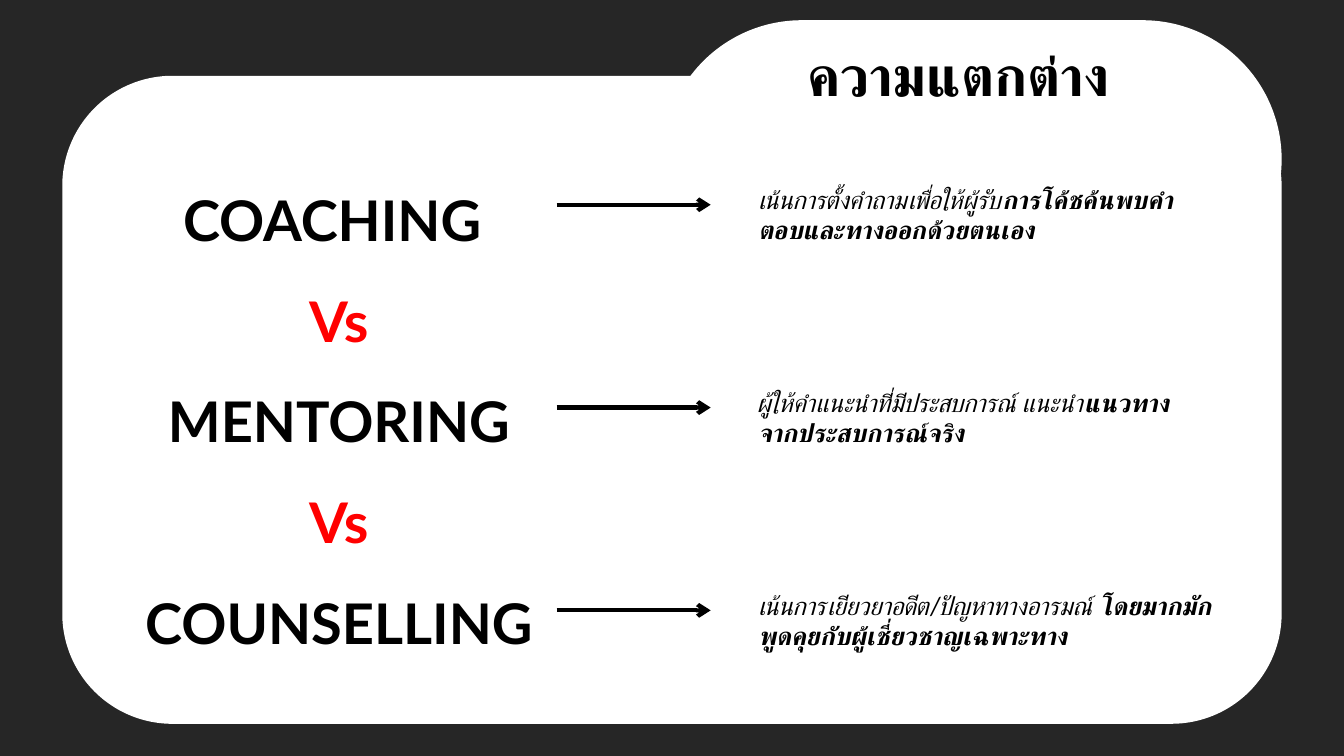
import pptx
import pptx.dml.color
import pptx.enum.lang
import pptx.enum.shapes
import pptx.enum.text
import pptx.oxml
import pptx.oxml.ns
import pptx.util
from pptx.util import Cm

FONT = "Lato"
BLACK, WHITE, RED, CHARCOAL = "000000", "FFFFFF", "FF0000", "262626"
ALIGN = pptx.enum.text.PP_ALIGN
ANCHOR = pptx.enum.text.MSO_ANCHOR
LANGUAGE = pptx.enum.lang.MSO_LANGUAGE_ID

APPROACHES = ["COACHING ", "MENTORING", "COUNSELLING"]
EXPLANATIONS = [
    ("เน้นการตั้งคำถามเพื่อให้ผู้รับ", "การโค้ชค้นพบคำตอบและทางออกด้วยตนเอง", 11.48, 2.57),
    ("ผู้ให้คำแนะนำที่มีประสบการณ์ แนะนำ", "แนวทางจากประสบการณ์จริง", 11.48, 1.8),
    ("เน้นการเยียวยาอดีต/ปัญหาทางอารมณ์ ", "โดยมากมักพูดคุยกับผู้เชี่ยวชาญเฉพาะทาง", 12.27, 1.8),
]


def color(hex_string):
    """Turn a hex string into a colour."""
    return pptx.dml.color.RGBColor.from_string(hex_string)


def element(tag, **attributes):
    """Make a DrawingML element with the given attributes."""
    made = pptx.oxml.parse_xml(f"<a:{tag} {pptx.oxml.ns.nsdecls('a')}/>")
    for key, value in attributes.items():
        made.set(key, value)
    return made


def write(paragraph, text, size=18, bold=None, italic=None, ink=BLACK,
          language=LANGUAGE.THAI):
    """Add a formatted run to a paragraph."""
    run = paragraph.add_run()
    run.text = text
    run.font.name = FONT
    run.font.size = pptx.util.Pt(size)
    run.font.bold = bold
    run.font.italic = italic
    run.font.color.rgb = color(ink)
    run.font.language_id = language
    for script in ("ea", "cs"):
        run.font._element.append(element(script, typeface=FONT))


def place(placeholder, left, top, width, height, wrap=True):
    """Move a placeholder to the front and into its box."""
    tree = placeholder._element.getparent()
    tree.append(placeholder._element)
    placeholder.left, placeholder.top = Cm(left), Cm(top)
    placeholder.width, placeholder.height = Cm(width), Cm(height)
    frame = placeholder.text_frame
    frame.word_wrap = wrap
    frame.auto_size = pptx.enum.text.MSO_AUTO_SIZE.NONE
    frame.vertical_anchor = ANCHOR.TOP
    return frame


def add_panel(slide, left, top, width, height, rounding):
    """Draw a white rounded panel."""
    panel = slide.shapes.add_shape(
        pptx.enum.shapes.MSO_SHAPE.ROUNDED_RECTANGLE,
        Cm(left), Cm(top), Cm(width), Cm(height))
    panel.adjustments[0] = rounding
    panel.shadow.inherit = False
    panel.fill.solid()
    panel.fill.fore_color.rgb = color(WHITE)
    panel.line.fill.background()


def add_folder(slide, left, top, width, height):
    """Draw the folder background: a tab at the top right and a body."""
    tab_width, tab_rise = 15.6, 1.4
    add_panel(slide, left + width - tab_width, top, tab_width, 7.01, 0.5)
    add_panel(slide, left, top + tab_rise, width, height - tab_rise, 0.17)


def add_heading(slide, left, top, width, height):
    """Place the slide title on the tab."""
    frame = place(slide.shapes.title, left, top, width, height, wrap=False)
    heading = frame.paragraphs[0]
    heading.alignment = ALIGN.LEFT
    write(heading, "ความแตกต่าง", size=40, bold=True)


def add_approaches(slide, left, top, width, height):
    """List the three approaches with a red Vs between them."""
    frame = place(slide.placeholders[1], left, top, width, height)
    lines = [(APPROACHES[0], BLACK)]
    for approach in APPROACHES[1:]:
        lines += [("Vs", RED), (approach, BLACK)]
    for index, (words, ink) in enumerate(lines):
        line = frame.paragraphs[0] if index == 0 else frame.add_paragraph()
        properties = line._p.get_or_add_pPr()
        properties.set("marL", "0")
        properties.set("indent", "0")
        properties.append(element("buNone"))
        line.alignment = ALIGN.CENTER
        line.line_spacing = 1.5
        line.space_before = pptx.util.Pt(0)
        write(line, words, size=40, bold=True, ink=ink,
              language=LANGUAGE.ENGLISH_US)


def add_arrow(slide, left, top, length):
    """Draw a horizontal arrow pointing right."""
    arrow = slide.shapes.add_connector(
        pptx.enum.shapes.MSO_CONNECTOR.STRAIGHT,
        Cm(left), Cm(top), Cm(left + length), Cm(top))
    arrow.line.width = pptx.util.Pt(3)
    arrow.line.color.rgb = color(BLACK)
    arrow.line._get_or_add_ln().append(element("tailEnd", type="arrow"))
    arrow._element.spPr.append(element("effectLst"))


def add_explanations(slide, left, top, pitch):
    """Place one arrow and its explanation per approach."""
    for row, (opening, emphasis, width, height) in enumerate(EXPLANATIONS):
        row_top = top + row * pitch
        add_arrow(slide, left, row_top + 0.64, 3.88)
        explanation = slide.shapes.add_textbox(
            Cm(left + 4.83), Cm(row_top), Cm(width), Cm(height))
        frame = explanation.text_frame
        frame.word_wrap = True
        write(frame.paragraphs[0], opening, italic=True)
        write(frame.paragraphs[0], emphasis, italic=True, bold=True)


def main():
    """Build the comparison slide and save it."""
    deck = pptx.Presentation()
    deck.slide_width, deck.slide_height = Cm(33.87), Cm(19.05)
    slide = deck.slides.add_slide(deck.slide_layouts[1])
    slide.background.fill.solid()
    slide.background.fill.fore_color.rgb = color(CHARCOAL)
    add_folder(slide, 1.57, 0.51, 30.73, 17.73)
    add_approaches(slide, 1.57, 3.7, 13.94, 12.88)
    add_explanations(slide, 14.03, 4.52, 5.11)
    add_heading(slide, 20.09, 0.89, 9.04, 1.96)
    deck.save("out.pptx")


if __name__ == "__main__":
    main()
